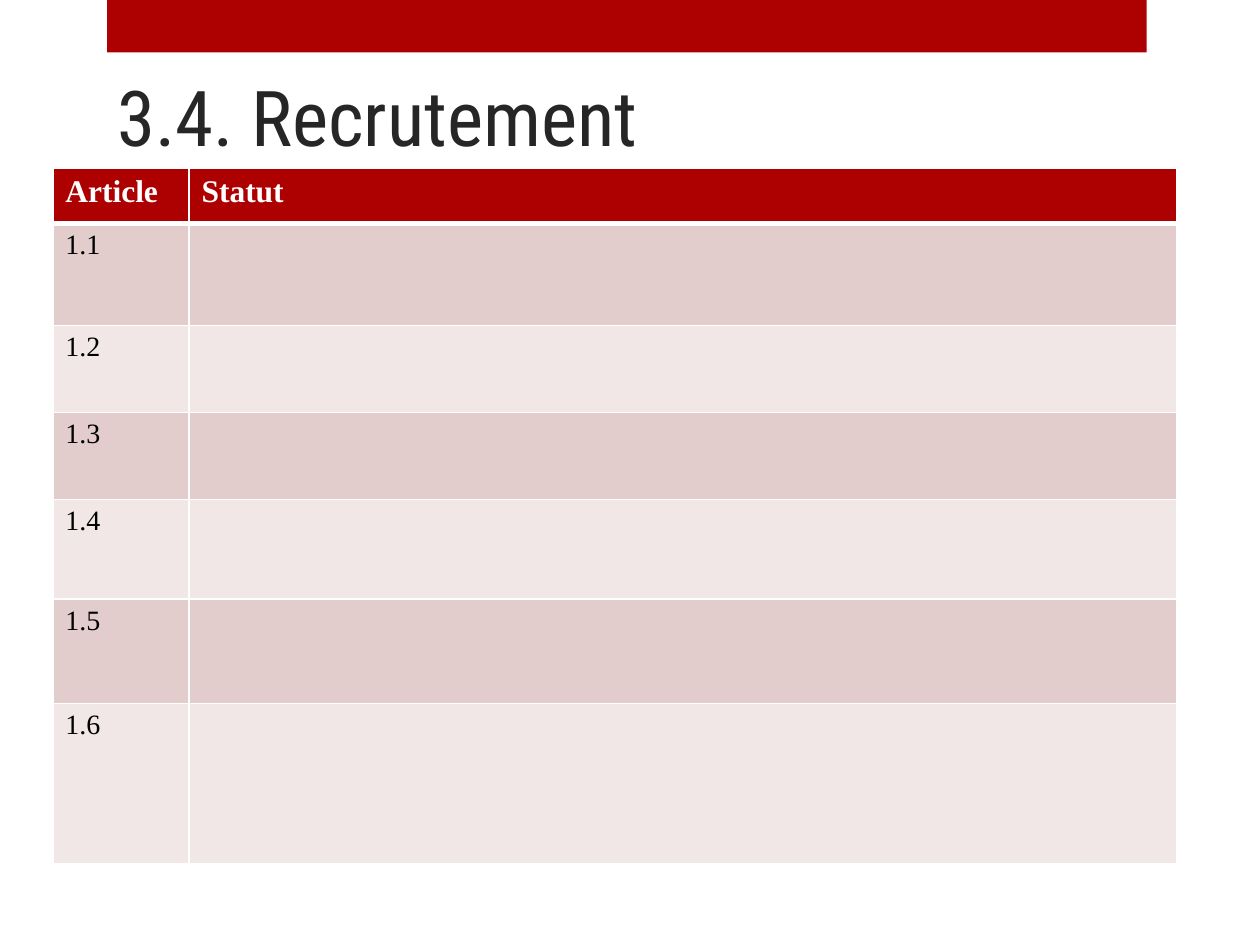
from dataclasses import dataclass

from lxml import etree
from pptx import Presentation
from pptx.dml.color import RGBColor
from pptx.enum.shapes import MSO_SHAPE
from pptx.enum.text import MSO_ANCHOR
from pptx.oxml.ns import qn
from pptx.util import Pt

RECTANGLE = MSO_SHAPE.RECTANGLE
BOTTOM = MSO_ANCHOR.BOTTOM

COLORS = {
    "red": "AD0101",
    "title": "262626",
    "white": "FFFFFF",
    "black": "000000",
    "band_dark": "E3CCCC",
    "band_light": "F1E7E7",
}
TITLE_FONT = "Roboto Condensed"
TABLE_FONT = "Times New Roman"
COLUMN_WIDTHS = (77.8, 564.5)


@dataclass
class Row:
    height: float
    texts: tuple[str, str]


ROWS = [
    Row(31.7, ("Article", "Statut")),
    Row(58.3, ("1.1", "")),
    Row(49.7, ("1.2", "")),
    Row(49.7, ("1.3", "")),
    Row(56.9, ("1.4", "")),
    Row(59.8, ("1.5", "")),
    Row(91.4, ("1.6", "")),
]


def rgb(name: str) -> RGBColor:
    return RGBColor.from_string(COLORS[name])


def write_text(frame, text: str, *, font: str, size: float, color: str,
               bold: bool = False) -> None:
    paragraph = frame.paragraphs[0]
    paragraph.font.size = Pt(size)
    if not text:
        return
    run = paragraph.add_run()
    run.text = text
    run.font.name = font
    run.font.size = Pt(size)
    run.font.bold = bold
    run.font.color.rgb = rgb(color)


def set_borders(cell, bottom_width: float) -> None:
    properties = cell._tc.get_or_add_tcPr()
    widths = {"a:lnL": 1, "a:lnR": 1, "a:lnT": 1, "a:lnB": bottom_width}
    # Border lines come before the fill in the cell properties
    for position, (tag, width) in enumerate(widths.items()):
        line = etree.Element(qn(tag), w=str(Pt(width)))
        fill = etree.SubElement(line, qn("a:solidFill"))
        etree.SubElement(fill, qn("a:srgbClr"), val=COLORS["white"])
        properties.insert(position, line)


def add_banner(slide) -> None:
    banner = slide.shapes.add_shape(RECTANGLE, Pt(61.2), Pt(0), Pt(594), Pt(30))
    banner.shadow.inherit = False
    banner.fill.solid()
    banner.fill.fore_color.rgb = rgb("red")
    banner.line.fill.background()


def add_title(slide, text: str) -> None:
    frame = slide.shapes.add_textbox(Pt(60), Pt(-30), Pt(534), Pt(126)).text_frame
    frame.word_wrap = True
    frame.vertical_anchor = BOTTOM
    write_text(frame, text, font=TITLE_FONT, size=44, color="title")


def add_articles(slide, rows: list[Row]) -> None:
    articles = slide.shapes.add_table(
        len(rows), len(COLUMN_WIDTHS), Pt(30.2), Pt(96),
        Pt(sum(COLUMN_WIDTHS)), Pt(sum(row.height for row in rows))).table
    for column, width in zip(articles.columns, COLUMN_WIDTHS):
        column.width = Pt(width)
    for r, row in enumerate(rows):
        articles.rows[r].height = Pt(row.height)
        header = r == 0
        band = "red" if header else "band_dark" if r % 2 else "band_light"
        for c, text in enumerate(row.texts):
            cell = articles.cell(r, c)
            cell.fill.solid()
            cell.fill.fore_color.rgb = rgb(band)
            set_borders(cell, 3 if header else 1)
            write_text(cell.text_frame, text, font=TABLE_FONT,
                       size=18 if header else 16,
                       color="white" if header else "black", bold=header)


def main() -> None:
    deck = Presentation()
    deck.slide_width, deck.slide_height = Pt(720), Pt(540)
    slide = deck.slides.add_slide(deck.slide_layouts[6])

    # Heading
    add_banner(slide)
    add_title(slide, "3.4. Recrutement")

    # Articles and their status
    add_articles(slide, ROWS)

    deck.save("out.pptx")


if __name__ == "__main__":
    main()
